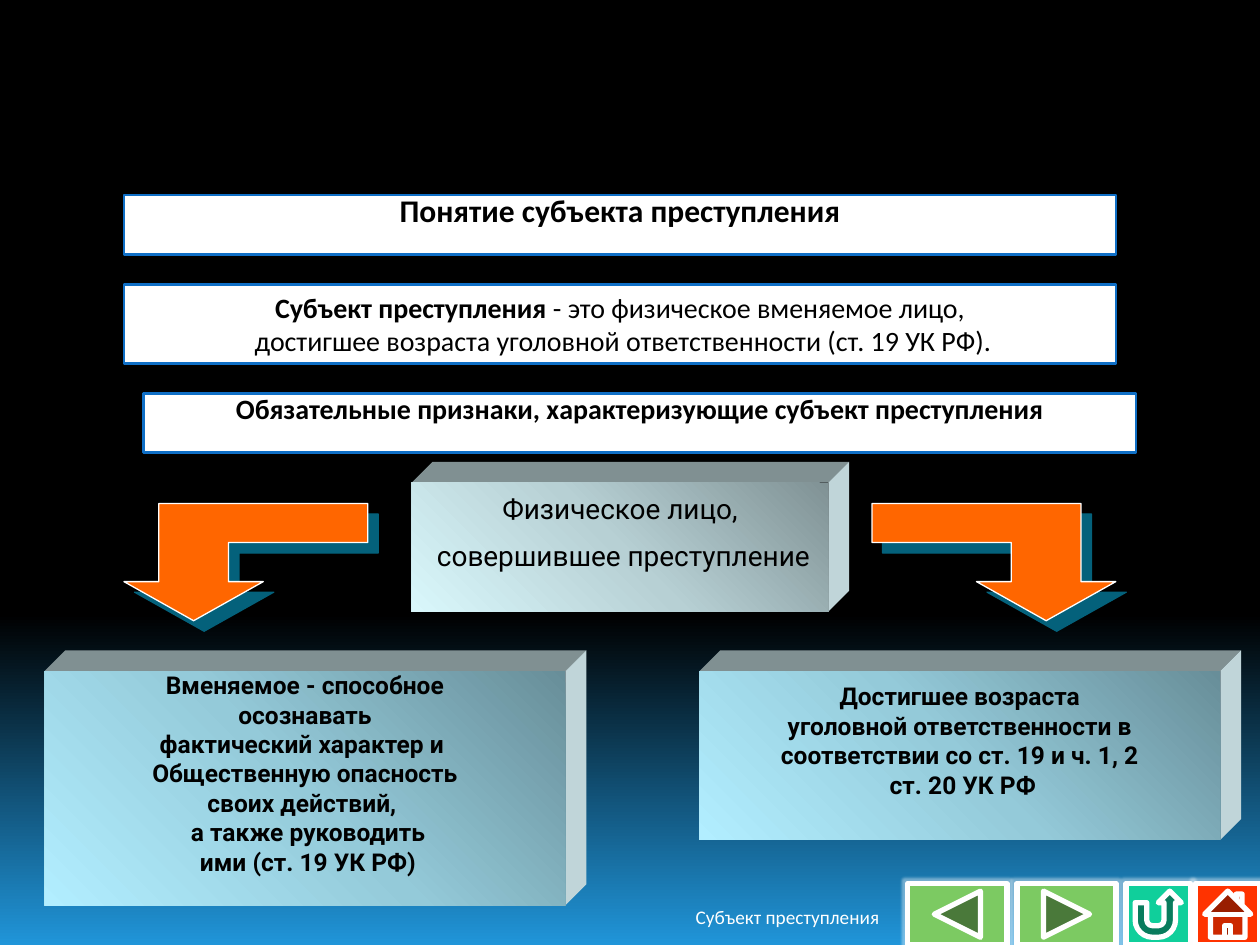
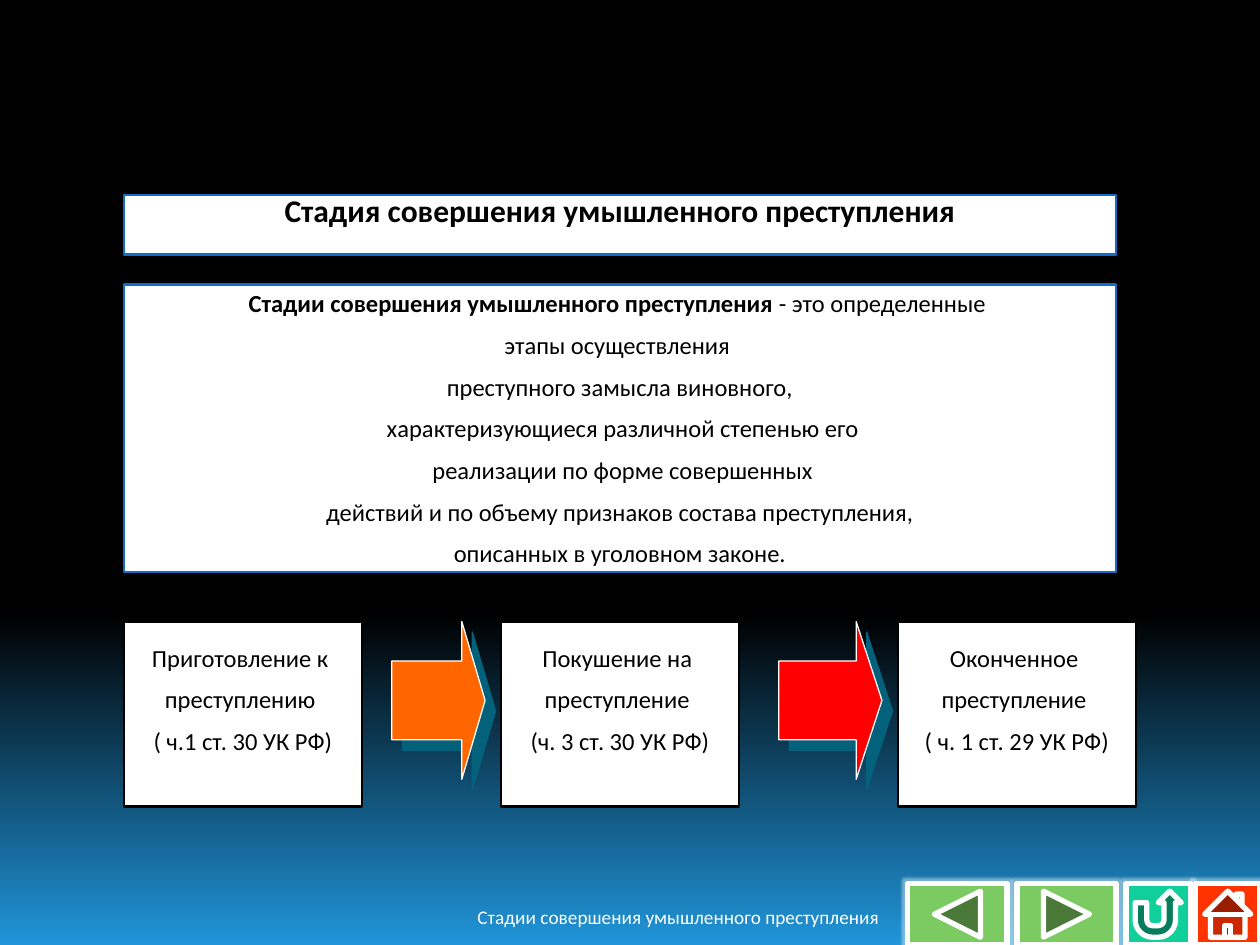
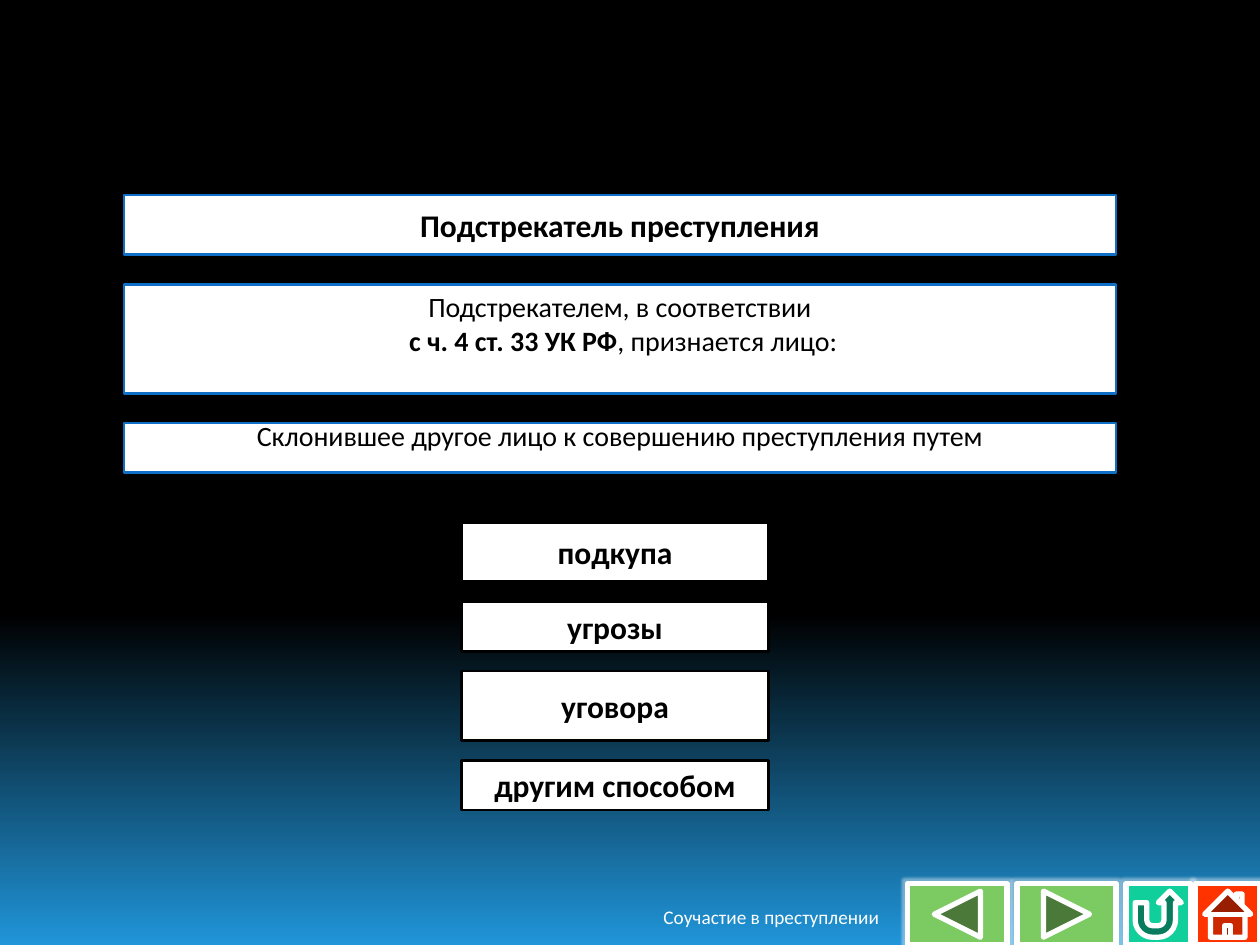
from dataclasses import dataclass

from lxml import etree
from pptx import Presentation
from pptx.dml.color import RGBColor
from pptx.enum.shapes import MSO_SHAPE
from pptx.enum.text import MSO_ANCHOR, PP_ALIGN
from pptx.oxml.ns import qn
from pptx.util import Emu, Inches, Pt

RECT, RIGHT_ARROW = MSO_SHAPE.RECTANGLE, MSO_SHAPE.RIGHT_ARROW
NEXT, BACK = MSO_SHAPE.ACTION_BUTTON_FORWARD_OR_NEXT, MSO_SHAPE.ACTION_BUTTON_BACK_OR_PREVIOUS
HOME, RETURN = MSO_SHAPE.ACTION_BUTTON_HOME, MSO_SHAPE.ACTION_BUTTON_RETURN
CENTER, RIGHT = PP_ALIGN.CENTER, PP_ALIGN.RIGHT
MIDDLE, BOTTOM = MSO_ANCHOR.MIDDLE, MSO_ANCHOR.BOTTOM


@dataclass(frozen=True)
class Theme:
    white: str = "FFFFFF"
    black: str = "000000"
    frame: str = "0F6FC6"
    orange: str = "FF6600"
    red: str = "FF0000"
    shadow: str = "04617B"
    nav_green: str = "7CCA62"
    nav_teal: str = "10CF9B"
    nav_red: str = "FF3300"
    block_top: str = "809092"
    block_side: str = "C0D5D9"
    backdrop: tuple = ((0, "000000"), (65, "000000"), (100, "2095D9"))
    pale_block: tuple = ((0, "809295"), (50, "B7D0D4"), (100, "D9F7FB"))
    blue_block: tuple = ((0, "688E99"), (50, "94CAD9"), (100, "B2EEFF"))
    font: str = "Calibri"
    block_font: str = "Roboto"
    title: int = 18
    lead: int = 16
    body: int = 14
    footer: int = 11


# Grid: 127 columns across the slide, with a small margin at left and top
COLUMNS = 127
MARGIN_COL, MARGIN_ROW = 0.5, 0.65
LEFT, WIDE, TOP, GAP = 12, 100, 19, 3
DEPTH = 2.1
BENT_ARROW = ((2, 3), (4, 2), (3, 2), (3, 1), (7, 1), (7, 0), (1, 0), (1, 2), (0, 2))
BENT_COL, BENT_ROW = 3.51, 3.94


class Deck:
    def __init__(self, theme):
        self.theme = theme
        self.prs = Presentation()
        self.prs.slide_width, self.prs.slide_height = Inches(10), Inches(7.5)
        self.cell = self.prs.slide_width / COLUMNS
        self.slide = None
        master = self.prs.slide_master
        self.gradient(master.background.fill, master.element, theme.backdrop, 90)

    # Geometry
    def size(self, cells):
        return Emu(round(cells * self.cell))

    def place(self, col, row, width, height):
        return (self.size(col + MARGIN_COL), self.size(row + MARGIN_ROW),
                self.size(width), self.size(height))

    # Paint
    def gradient(self, fill, owner, stops, angle):
        fill.gradient()
        fill.gradient_angle = 360 - angle
        stop_list = owner.find(".//" + qn("a:gsLst"))
        for old in list(stop_list):
            stop_list.remove(old)
        for position, color in stops:
            stop = etree.SubElement(stop_list, qn("a:gs"), pos=str(position * 1000))
            etree.SubElement(stop, qn("a:srgbClr"), val=color)

    def paint(self, shape, fill, line=None, weight=1.5):
        shape.shadow.inherit = False
        if isinstance(fill, str):
            shape.fill.solid()
            shape.fill.fore_color.rgb = RGBColor.from_string(fill)
        else:
            self.gradient(shape.fill, shape.element, fill, 135)
        if line:
            shape.line.color.rgb = RGBColor.from_string(line)
            shape.line.width = Pt(weight)
        else:
            shape.line.fill.background()

    def effect(self, shape, kind, color, alpha=100, **settings):
        effects = shape.element.spPr.find(qn("a:effectLst"))
        node = etree.SubElement(effects, qn("a:" + kind), **settings)
        tint = etree.SubElement(node, qn("a:srgbClr"), val=color)
        etree.SubElement(tint, qn("a:alpha"), val=str(alpha * 1000))

    def drop_shadow(self, shape):
        self.effect(shape, "outerShdw", self.theme.shadow, blurRad="0",
                    dist=str(Pt(8.5)), dir="2700000", algn="ctr", rotWithShape="0")

    # Text: a line is a string, or a list of (text, bold) runs
    def add_text(self, shape, lines, size, bold=False, font=None, color=None,
                 align=CENTER, anchor=MIDDLE, spaced=False, wrap=False, tail=0):
        frame = shape.text_frame
        frame.word_wrap = wrap
        frame.vertical_anchor = anchor
        frame.margin_bottom = Inches(0.05 + tail)
        for index, line in enumerate(lines):
            paragraph = frame.paragraphs[0] if index == 0 else frame.add_paragraph()
            paragraph.alignment = align
            if spaced and index:
                paragraph.space_before = Pt(size / 2)
            for text, heavy in ([(line, bold)] if isinstance(line, str) else line):
                run = paragraph.add_run()
                run.text = text
                run.font.size, run.font.bold = Pt(size), heavy
                run.font.name = font or self.theme.font
                run.font.color.rgb = RGBColor.from_string(color or self.theme.black)

    # Elements
    def box(self, lines, col, row, width, height, size, line=None, **style):
        shape = self.slide.shapes.add_shape(RECT, *self.place(col, row, width, height))
        self.paint(shape, self.theme.white, line or self.theme.frame)
        self.add_text(shape, lines, size, **style)
        return row + height + GAP

    def outline(self, points, fill, line=None):
        corners = [self.place(x, y, 0, 0)[:2] for x, y in points]
        builder = self.slide.shapes.build_freeform(*corners[0], scale=1.0)
        builder.add_line_segments(corners[1:], close=True)
        shape = builder.convert_to_shape()
        self.paint(shape, fill, line, 0.75)
        return shape

    def block(self, lines, col, row, width, height, fill, size, **style):
        right, bottom = col + width, row + height
        self.outline([(col, row), (col + DEPTH, row - DEPTH),
                      (right + DEPTH, row - DEPTH), (right, row)], self.theme.block_top)
        self.outline([(right, row), (right + DEPTH, row - DEPTH),
                      (right + DEPTH, bottom - DEPTH), (right, bottom)], self.theme.block_side)
        front = self.slide.shapes.add_shape(RECT, *self.place(col, row, width, height))
        self.paint(front, fill)
        self.add_text(front, lines, size, font=self.theme.block_font, tail=0.24, **style)

    def bent_arrow(self, col, row, mirrored=False):
        points = [(col + (7 - x if mirrored else x) * BENT_COL, row + y * BENT_ROW)
                  for x, y in BENT_ARROW]
        self.drop_shadow(self.outline(points, self.theme.orange, self.theme.white))

    def arrow(self, col, row, width, height, fill):
        shape = self.slide.shapes.add_shape(RIGHT_ARROW, *self.place(col, row, width, height))
        shape.adjustments[0], shape.adjustments[1] = 0.5, 0.25
        self.paint(shape, fill, self.theme.white, 0.75)
        self.drop_shadow(shape)

    def navigation(self):
        theme = self.theme
        for kind, col, width, fill in ((BACK, 91, 10, theme.nav_green),
                                       (NEXT, 102, 10, theme.nav_green),
                                       (RETURN, 113, 6.5, theme.nav_teal),
                                       (HOME, 120, 6.5, theme.nav_red)):
            button = self.slide.shapes.add_shape(kind, *self.place(col, 88.4, width, 6.2))
            self.paint(button, fill, theme.white, 3)
            self.effect(button, "glow", theme.white, alpha=40, rad=str(Pt(3)))
            if kind == NEXT:
                button.element.spPr.xfrm.set("flipV", "1")

    def new_slide(self, title, section, **title_style):
        self.slide = self.prs.slides.add_slide(self.prs.slide_layouts[6])
        footer = self.slide.shapes.add_textbox(*self.place(12.2, 88.5, 77.2, 5.1))
        self.add_text(footer, [section], self.theme.footer, color=self.theme.white,
                      align=RIGHT, anchor=BOTTOM, wrap=True)
        self.navigation()
        return self.box([title], LEFT, TOP, WIDE, 6, self.theme.title, bold=True, **title_style)


def subject_slide(deck):
    theme = deck.theme
    row = deck.new_slide("Понятие субъекта преступления", "Субъект преступления", tail=0.24)
    row = deck.box([[("Субъект преступления", True), (" - это физическое вменяемое лицо,", False)],
                    " достигшее возраста уголовной ответственности (ст. 19 УК РФ)."],
                   LEFT, row, WIDE, 8, theme.lead)
    deck.box(["Обязательные признаки, характеризующие субъект преступления"],
             LEFT + 2, row, WIDE, 6, theme.lead, bold=True, tail=0.24)

    # Three mandatory features
    deck.bent_arrow(LEFT, 50.1)
    deck.bent_arrow(87.4, 50.1, mirrored=True)
    deck.block(["Физическое лицо,", " совершившее преступление"],
               41, 48, 42, 13, theme.pale_block, theme.lead, spaced=True)
    deck.block(["Вменяемое - способное", " осознавать ", "фактический характер и ",
                "Общественную опасность", "своих действий, ", " а также руководить",
                " ими (ст. 19 УК РФ)"],
               4, 67, 52.5, 23.6, theme.blue_block, theme.body, bold=True)
    deck.block(["Достигшее возраста", " уголовной ответственности в ",
                "соответствии со ст. 19 и ч. 1, 2", " ст. 20 УК РФ"],
               70, 67, 52.5, 17, theme.blue_block, theme.body, bold=True)


def stages_slide(deck):
    theme = deck.theme
    row = deck.new_slide("Стадия совершения умышленного преступления",
                         "Стадии совершения умышленного преступления", tail=0.24)
    deck.box([[("Стадии совершения умышленного преступления", True),
               (" - это определенные ", False)],
              "этапы осуществления ", "преступного замысла виновного,",
              " характеризующиеся различной степенью его", " реализации по форме совершенных",
              " действий и по объему признаков состава преступления, ",
              "описанных в уголовном законе."],
             LEFT, row, WIDE, 29, theme.body, spaced=True)

    # Chain of stages
    stage_row = 62
    deck.arrow(39, stage_row, 9.4, 15.9, theme.orange)
    deck.arrow(78, stage_row, 10.4, 15.9, theme.red)
    stages = ((LEFT, ["Приготовление к ", "преступлению ", "( ч.1 ст. 30 УК РФ)"]),
              (50, ["Покушение на ", "преступление ", "(ч. 3 ст. 30 УК РФ)"]),
              (90, ["Оконченное ", "преступление ", "( ч. 1 ст. 29 УК РФ)"]))
    for col, lines in stages:
        deck.box(lines, col, stage_row, 24, 18.67, theme.body, line=theme.black,
                 spaced=True, tail=0.24)


def instigator_slide(deck):
    theme = deck.theme
    row = deck.new_slide("Подстрекатель преступления", "Соучастие в преступлении")
    row = deck.box(["Подстрекателем, в соответствии",
                    [(" ", False), ("с ч. 4 ст. 33 УК РФ", True), (", признается лицо:", False)]],
                   LEFT, row, WIDE, 11, theme.lead, tail=0.24)
    deck.box(["Склонившее другое лицо к совершению преступления путем"],
             LEFT, row, WIDE, 5, theme.lead, tail=0.2)

    # Means of instigation, two rows apart
    row = 52
    for means, height in (("подкупа", 6), ("угрозы", 5), ("уговора", 7), ("другим способом", 5)):
        deck.box([means], 46, row, 31, height, theme.title, line=theme.black, bold=True)
        row += height + 2


def main():
    deck = Deck(Theme())
    subject_slide(deck)
    stages_slide(deck)
    instigator_slide(deck)
    deck.prs.save("out.pptx")


if __name__ == "__main__":
    main()
